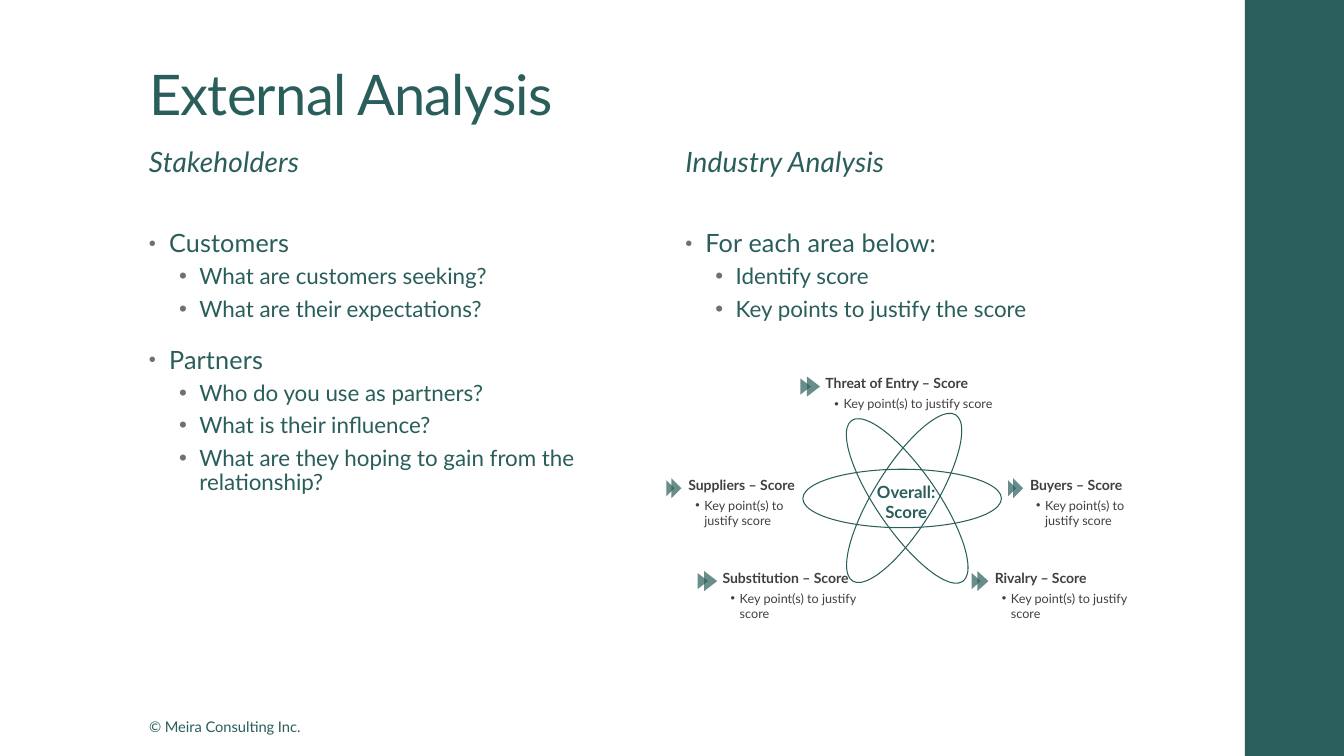
import pptx
import pptx.dml.color
import pptx.enum.shapes
import pptx.enum.text
import pptx.oxml.ns
import pptx.util
from lxml import etree
from dataclasses import dataclass

SHAPES = pptx.enum.shapes.MSO_SHAPE
ALIGN = pptx.enum.text.PP_ALIGN
AUTO_SIZE = pptx.enum.text.MSO_AUTO_SIZE


@dataclass(frozen=True)
class Theme:
    font: str = "Lato"
    green: str = "295E5B"
    bullet: str = "6F6F74"
    dark: str = "404040"
    title: float = 40
    subtitle: float = 20
    topic: float = 18
    question: float = 16
    centre: float = 12
    footer: float = 10.5
    label: float = 10
    detail: float = 9


THEME = Theme()


@dataclass(frozen=True)
class Style:
    size: float
    color: str = THEME.green
    bold: bool = False
    italic: bool = False
    tracking: float = 0
    align: int = ALIGN.LEFT
    line: float = 1
    before: float = 0
    after: float = 0
    level: int = 0
    indent: float = 0
    hanging: float = 0
    bullet_color: str = ""
    bullet_percent: int = 100


TITLE = Style(THEME.title, tracking=-0.5, line=0.9)
SUBTITLE = Style(THEME.subtitle, italic=True, tracking=0.1, line=0.95, after=2)
TOPIC = Style(THEME.topic, tracking=0.1, line=0.95, before=14, after=2, indent=2, hanging=2,
              bullet_color=THEME.bullet, bullet_percent=80)
QUESTION = Style(THEME.question, line=0.9, before=3, after=3, level=1, indent=5, hanging=2,
                 bullet_color=THEME.bullet)
FOOTER = Style(THEME.footer)
CENTRE = Style(THEME.centre, bold=True, align=ALIGN.CENTER)
LABEL = Style(THEME.label, THEME.dark, bold=True)
DETAIL = Style(THEME.detail, THEME.dark, indent=0.9, hanging=0.9, bullet_color=THEME.dark)


def grid(count):
    """Length of a number of columns or rows; each is a tenth of an inch."""
    return pptx.util.Inches(count / 10)


def rgb(color):
    return pptx.dml.color.RGBColor.from_string(color)


def add_child(parent, tag, **attributes):
    return etree.SubElement(parent, pptx.oxml.ns.qn(tag), attributes)


class SlideBuilder:
    def __init__(self, slide, theme):
        self.slide = slide
        self.theme = theme
        self.shapes = slide.shapes

    def start_group(self):
        """Place the elements that follow in a new group."""
        self.shapes = self.slide.shapes.add_group_shape().shapes

    def fill_frame(self, frame, lines):
        """Fill a text frame with (text, style) pairs, one per paragraph."""
        for index, (text, style) in enumerate(lines):
            paragraph = frame.add_paragraph() if index else frame.paragraphs[0]
            paragraph.text = text
            paragraph.level = style.level
            paragraph.alignment = style.align
            paragraph.line_spacing = style.line
            paragraph.space_before = pptx.util.Pt(style.before if index else 0)
            paragraph.space_after = pptx.util.Pt(style.after)
            if style.bullet_color:
                self.add_bullet(paragraph, style)
            font = paragraph.font
            font.name = self.theme.font
            font.size = pptx.util.Pt(style.size)
            font.bold = style.bold
            font.italic = style.italic
            font.color.rgb = rgb(style.color)
            if style.tracking:
                font._rPr.set("spc", str(round(style.tracking * 100)))

    def add_bullet(self, paragraph, style):
        properties = paragraph._p.get_or_add_pPr()
        properties.set("marL", str(grid(style.indent)))
        properties.set("indent", str(-grid(style.hanging)))
        color = add_child(properties, "a:buClr")
        add_child(color, "a:srgbClr", val=style.bullet_color)
        add_child(properties, "a:buSzPct", val=str(style.bullet_percent * 1000))
        add_child(properties, "a:buFont", typeface="Arial")
        add_child(properties, "a:buChar", char="•")

    def title(self, text, left, top, width, height):
        title = self.slide.shapes.title
        title.left, title.top = grid(left), grid(top)
        title.width, title.height = grid(width), grid(height)
        title.text_frame.auto_size = AUTO_SIZE.NONE
        title.text_frame.vertical_anchor = pptx.enum.text.MSO_ANCHOR.BOTTOM
        self.fill_frame(title.text_frame, [(text, TITLE)])

    def text(self, lines, left, top, width, height, wrap=True, grow=False):
        box = self.shapes.add_textbox(grid(left), grid(top), grid(width), grid(height))
        box.text_frame.word_wrap = wrap
        box.text_frame.auto_size = AUTO_SIZE.SHAPE_TO_FIT_TEXT if grow else AUTO_SIZE.NONE
        self.fill_frame(box.text_frame, lines)

    def shape(self, kind, left, top, width, height, rotation=0, filled=True, opacity=100):
        shape = self.shapes.add_shape(kind, grid(left), grid(top), grid(width), grid(height))
        shape.shadow.inherit = False
        shape.rotation = rotation
        color = rgb(self.theme.green)
        if filled:
            shape.fill.solid()
            shape.fill.fore_color.rgb = color
            shape.line.fill.background()
            if opacity < 100:
                fill_color = shape._element.spPr.find(".//" + pptx.oxml.ns.qn("a:srgbClr"))
                add_child(fill_color, "a:alpha", val=str(opacity * 1000))
        else:
            shape.fill.background()
            shape.line.color.rgb = color
            shape.line.width = pptx.util.Pt(0.75)

    def force(self, name, left, top, width, arrow_depth, detail_inset, detail_height):
        """Draw one industry force: heading, double arrowhead and key point."""
        self.text([(f"{name} – Score", LABEL)], left, top, width, 2.7, grow=True)
        arrows = [(0.2, 2, arrow_depth), (0.2 + 0.6 * arrow_depth, 1.6, 0.8 * arrow_depth)]
        for offset, base, depth in arrows:
            self.shape(SHAPES.ISOSCELES_TRIANGLE, left - offset - base / 2,
                       top + 1.65 - depth / 2, base, depth, rotation=90, opacity=70)
        self.text([("Key point(s) to justify score", DETAIL)], left + detail_inset, top + 2.1,
                  width - detail_inset + 0.1, detail_height, grow=True)


LEFT_COLUMN, RIGHT_COLUMN, COLUMN_WIDTH = 13.8, 67, 49

COLUMNS = [
    (LEFT_COLUMN, "Stakeholders", [
        ("Customers", TOPIC),
        ("What are customers seeking?", QUESTION),
        ("What are their expectations?", QUESTION),
        ("Partners", TOPIC),
        ("Who do you use as partners?", QUESTION),
        ("What is their influence?", QUESTION),
        ("What are they hoping to gain from the relationship?", QUESTION),
    ]),
    (RIGHT_COLUMN, "Industry Analysis", [
        ("For each area below:", TOPIC),
        ("Identify score", QUESTION),
        ("Key points to justify the score", QUESTION),
    ]),
]

ORBITS = [(86.7, 39.7, 6, 19.4, 31.8), (87, 40, 6, 19.4, 325.4), (86.6, 39.6, 5.8, 19.7, 270)]

# name, left, top, width, arrow depth, key point inset, key point height
FORCES = [
    ("Threat of Entry", 80.9, 36.7, 19.5, 1.3, 0.9, 2.5),
    ("Suppliers", 67.3, 46.8, 14.9, 1, 0.7, 4),
    ("Substitution", 70.7, 56, 18.2, 1.3, 0.8, 4),
    ("Rivalry", 97.7, 56, 16.1, 1.1, 0.7, 4),
    ("Buyers", 101.2, 46.8, 14.7, 1, 0.6, 4),
]


def main():
    presentation = pptx.Presentation()
    presentation.slide_width, presentation.slide_height = grid(133.33), grid(75)
    title_only = presentation.slide_layouts[5]
    builder = SlideBuilder(presentation.slides.add_slide(title_only), THEME)

    builder.shape(SHAPES.RECTANGLE, 123.5, 0, 9.83, 75)
    builder.text([("© Meira Consulting Inc.", FOOTER)], LEFT_COLUMN, 70.7, 17.2, 2.8,
                 wrap=False, grow=True)
    builder.title("External Analysis", LEFT_COLUMN, 4.1, 106, 9.1)
    for left, heading, lines in COLUMNS:
        builder.text([(heading, SUBTITLE)], left, 14.1, COLUMN_WIDTH, 8)
        builder.text(lines, left, 22.3, COLUMN_WIDTH, 45.2)

    builder.start_group()
    for left, top, width, height, rotation in ORBITS:
        builder.shape(SHAPES.OVAL, left, top, width, height, rotation, filled=False)
    builder.text([("Overall: Score", CENTRE)], 84.7, 47.3, 10.4, 5, grow=True)
    for force in FORCES:
        builder.force(*force)

    presentation.save("out.pptx")


if __name__ == "__main__":
    main()
